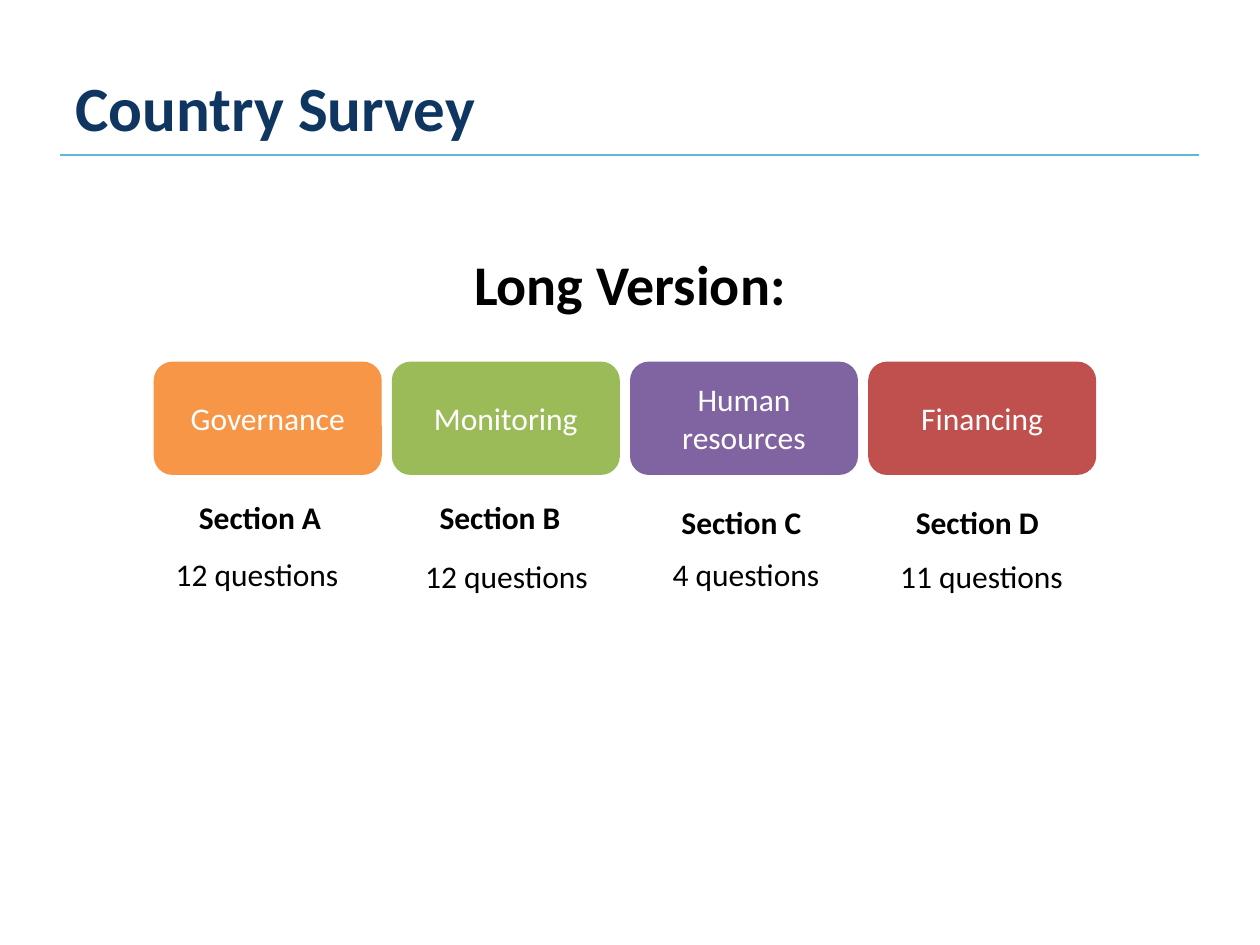
from dataclasses import dataclass
from lxml.etree import SubElement
from pptx import Presentation
from pptx.dml.color import RGBColor as RGB
from pptx.enum.shapes import MSO_CONNECTOR as LINK, MSO_SHAPE as SHAPE
from pptx.enum.text import MSO_ANCHOR as ANCHOR, MSO_AUTO_SIZE as AUTO, PP_ALIGN as ALIGN
from pptx.oxml.ns import qn
from pptx.util import Inches, Pt


@dataclass
class Theme:
    font: str = "Calibri"
    navy: str = "0F3661"
    rule: str = "60B8D8"
    black: str = "000000"
    white: str = "FFFFFF"
    title: int = 36
    head: int = 32
    text: int = 18


theme = Theme()


def place(shape, x, y, w, h):
    shape.left, shape.top = Inches(x), Inches(y)
    shape.width, shape.height = Inches(w), Inches(h)


def write(shape, text, size, color, bold=False, align=ALIGN.CENTER, anchor=ANCHOR.TOP):
    frame = shape.text_frame
    frame.word_wrap = True
    frame.vertical_anchor = anchor
    para = frame.paragraphs[0]
    para.alignment = align
    run = para.add_run()
    run.text = text
    font = run.font
    font.name, font.size, font.bold = theme.font, Pt(size), bold
    font.color.rgb = RGB.from_string(color)
    return para


deck = Presentation()
wide, high = 10, 7.5
deck.slide_width, deck.slide_height = Inches(wide), Inches(high)
slide = deck.slides.add_slide(deck.slide_layouts[1])
shapes = slide.shapes
edge = wide * 0.05

# Title and heading
title, body = slide.placeholders
place(title, edge, high * 0.04, wide - 2 * edge, 1.09)
write(title, "Country Survey", theme.title, theme.navy, True, ALIGN.LEFT, ANCHOR.MIDDLE)

place(body, edge, 1.93, wide - 2 * edge, 0.71)
para = write(body, "Long Version:", theme.head, theme.black, True)
para.space_before = Pt(0)
props = para._p.get_or_add_pPr()
props.set("marL", "0")
props.set("indent", "0")
SubElement(props, qn("a:buNone"))

# Rule under the title
start, level = 0.48, 1.23
rule = shapes.add_connector(LINK.STRAIGHT, Inches(start), Inches(level),
                            Inches(wide - start), Inches(level))
rule.line.color.rgb = RGB.from_string(theme.rule)
rule.line.width = Pt(1)
SubElement(rule._element.spPr, qn("a:effectLst"))

# Four survey parts: name, fill, section, questions,
# then the (column shift, top) of the section and of the questions
parts = [
    ("Governance", "F79646", "Section A", "12 questions", (0.26, 3.9), (0.06, 4.36)),
    ("Monitoring", "9BBB59", "Section B", "12 questions", (0.28, 3.9), (0.15, 4.37)),
    ("Human resources", "8064A2", "Section C", "4 questions", (0.31, 3.94), (0.16, 4.36)),
    ("Financing", "C0504D", "Section D", "11 questions", (0.28, 3.94), (0.14, 4.37)),
]
left, top, step = 1.22, 2.87, 1.89
group = shapes.add_group_shape()
for col, (name, fill, label, count, spot, base) in enumerate(parts):
    x = left + col * step
    card = group.shapes.add_shape(SHAPE.ROUNDED_RECTANGLE, Inches(x), Inches(top),
                                  Inches(1.81), Inches(0.9))
    card.shadow.inherit = False
    card.fill.solid()
    card.fill.fore_color.rgb = RGB.from_string(fill)
    card.line.fill.background()
    write(card, name, theme.text, theme.white, anchor=ANCHOR.MIDDLE)

    # Section and question count below the card
    for text, (shift, y), w, bold, align in (
        (label, spot, 1.26, True, ALIGN.LEFT),
        (count, base, 1.52, False, ALIGN.CENTER),
    ):
        box = shapes.add_textbox(Inches(x + shift), Inches(y), Inches(w), Inches(0.4))
        write(box, text, theme.text, theme.black, bold, align)
        box.text_frame.auto_size = AUTO.SHAPE_TO_FIT_TEXT

deck.save("out.pptx")
